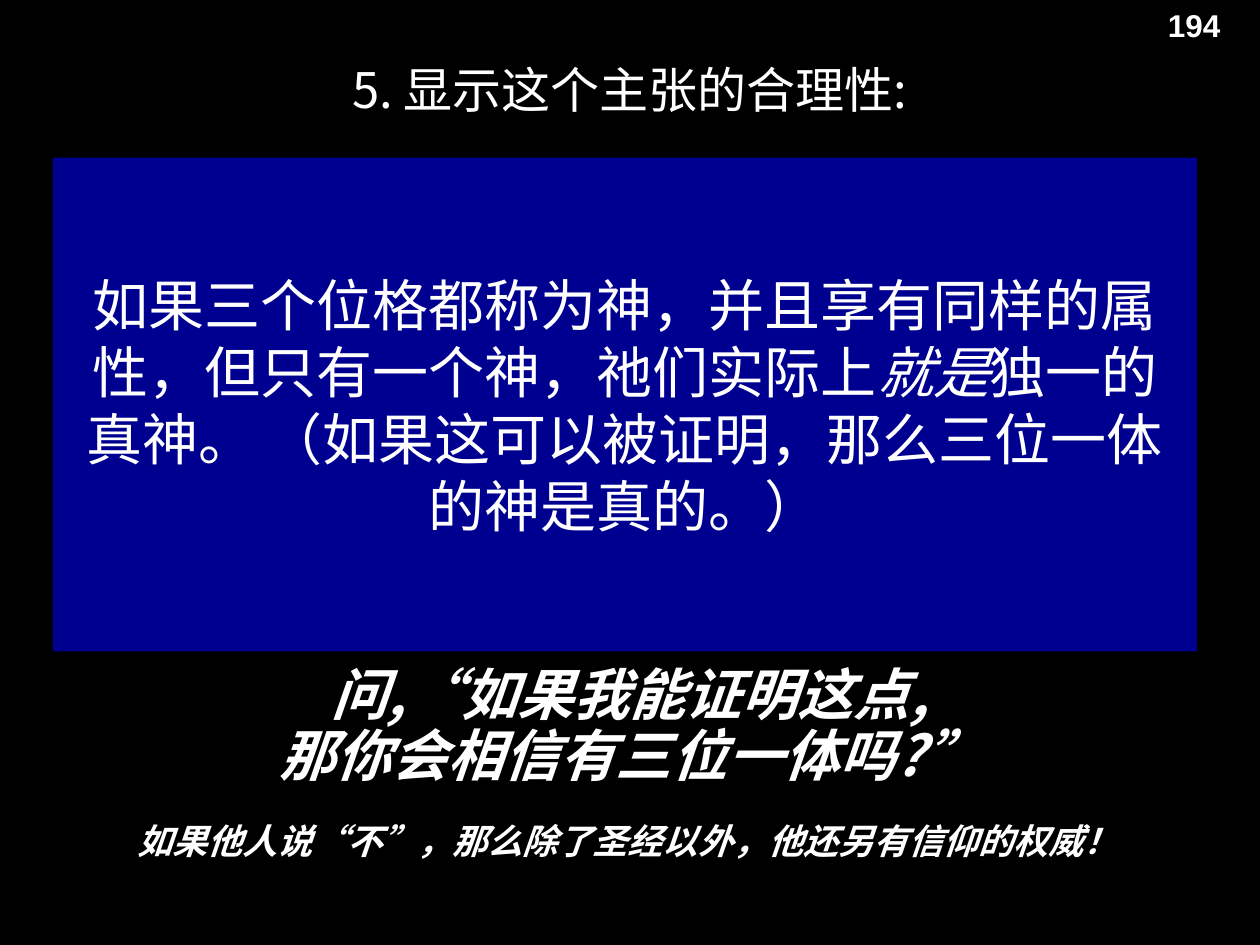
import pptx
import pptx.util
import pptx.dml.color
import pptx.enum.shapes
import pptx.enum.text
import pptx.oxml
import pptx.oxml.ns
from pptx.util import Inches

CJK = "Noto Sans CJK SC"
WHITE, BLACK, BLUE = "FFFFFF", "000000", "000090"

# Content: each line is a list of (text, italic) runs
TITLE = [[("5. 显示这个主张的合理性:", False)]]
CLAIM = [[
    ("如果三个位格都称为神，并且享有同样的属性，但只有一个神，祂们实际上", False),
    ("就是", True),
    ("独一的真神。 （如果这可以被证明，那么三位一体的神是真的。）", False),
]]
ASK = [[("问,“如果我能证明这点,", True)], [("那你会相信有三位一体吗?”", True)]]
NOTE = [[("如果他人说“不”，那么除了圣经以外，他还另有信仰的权威！", True)]]
PAGE = [[("194", False)]]


def color(code):
    return pptx.dml.color.RGBColor.from_string(code)


def write(shape, lines, size, font=CJK, bold=False, gap=None,
          align="CENTER", anchor="MIDDLE", wrap=True):
    frame = shape.text_frame
    frame.word_wrap = wrap
    frame.vertical_anchor = pptx.enum.text.MSO_ANCHOR[anchor]
    para = frame.paragraphs[0]
    para.alignment = pptx.enum.text.PP_ALIGN[align]
    if gap:
        para.line_spacing = gap
    for row, line in enumerate(lines):
        if row:
            para.add_line_break()
        for text, slant in line:
            run = para.add_run()
            run.text = text
            run.font.size = pptx.util.Pt(size)
            run.font.name = font
            run.font.bold = bold
            run.font.italic = slant
            run.font.color.rgb = color(WHITE)
            # East Asian typeface follows the Latin one
            east = pptx.oxml.parse_xml(
                f'<a:ea {pptx.oxml.ns.nsdecls("a")} typeface="{font}"/>')
            run.font._element.find(pptx.oxml.ns.qn("a:latin")).addnext(east)
    return frame


def place(box):
    return [Inches(value) for value in box]


def panel(slide, box, fill):
    shape = slide.shapes.add_shape(
        pptx.enum.shapes.MSO_SHAPE.RECTANGLE, *place(box))
    shape.shadow.inherit = False
    shape.fill.solid()
    shape.fill.fore_color.rgb = color(fill)
    shape.line.fill.background()
    return shape


def main():
    deck = pptx.Presentation()
    deck.slide_width, deck.slide_height = Inches(10), Inches(7.5)
    slide = deck.slides.add_slide(deck.slide_layouts[6])
    slide.background.fill.solid()
    slide.background.fill.fore_color.rgb = color(BLACK)
    label = slide.shapes.add_textbox

    # Heading and claim
    write(label(*place((0.08, 0.08, 9.83, 1.25))), TITLE, 28)
    write(panel(slide, (0.42, 1.25, 9.08, 3.92), BLUE), CLAIM, 32)

    # Question and closing remark
    write(label(*place((0, 5.25, 10, 1.05))), ASK, 32, bold=True, gap=0.9)
    note = write(label(*place((0, 6.24, 9.97, 1.25))), NOTE, 20,
                 bold=True, gap=0.9)
    note.margin_bottom = Inches(0.4)

    # Page number
    write(panel(slide, (9.17, 0, 0.76, 0.51), BLACK), PAGE, 18, font="Arial",
          bold=True, align="LEFT", anchor="TOP", wrap=False)

    deck.save("out.pptx")


if __name__ == "__main__":
    main()
